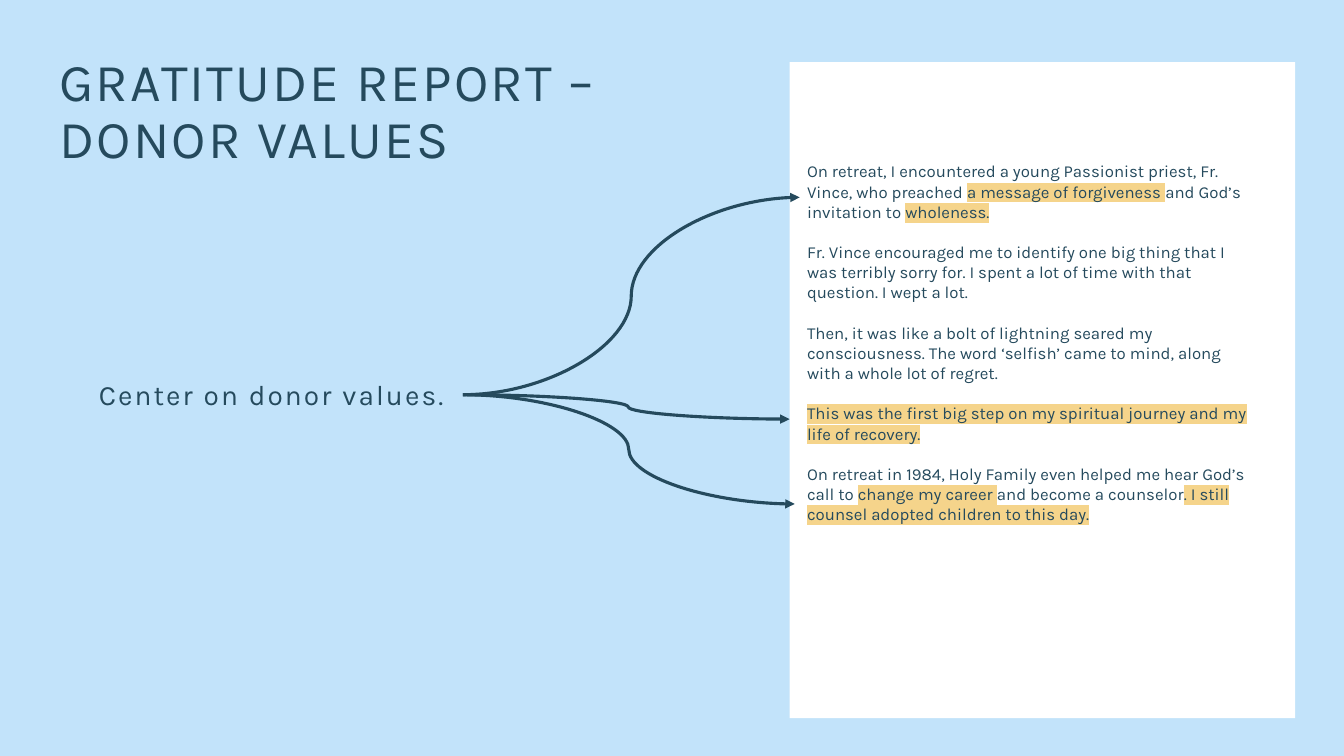
from typing import NamedTuple

from lxml.etree import SubElement
from pptx import Presentation
from pptx.dml.color import RGBColor
from pptx.enum.shapes import MSO_CONNECTOR as Connector, MSO_SHAPE as Preset
from pptx.enum.text import MSO_ANCHOR as Anchor, PP_ALIGN as Align
from pptx.oxml import parse_xml
from pptx.oxml.ns import nsdecls, qn
from pptx.util import Inches, Pt

# The page is a grid of 160 columns by 90 rows
COLUMNS, ROWS = 160, 90
WIDTH, HEIGHT = Inches(13.333), Inches(7.5)
SKY, WHITE, NAVY, GOLD = "C2E3FA", "FFFFFF", "254A5D", "F5D48B"
FONT = "Karla"


class Area(NamedTuple):
    column: float
    row: float
    columns: float
    rows: float


class Span(NamedTuple):
    text: str
    marked: bool = False


class Arrow(NamedTuple):
    start: tuple[float, float]
    end: tuple[float, float]


STORY = [
    [Span("On retreat, I encountered a young Passionist priest, Fr. Vince, who preached "),
     Span("a message of forgiveness ", True),
     Span("and God’s invitation to "),
     Span("wholeness.", True)],
    [Span("Fr. Vince encouraged me to identify one big thing that I was terribly sorry for. "
          "I spent a lot of time with that question. I wept a lot.")],
    [Span("Then, it was like a bolt of lightning seared my consciousness. "
          "The word ‘selfish’ came to mind, along with a whole lot of regret.")],
    [Span("This was the first big step on my spiritual journey and my life of recovery.", True)],
    [Span("On retreat in 1984, Holy Family even helped me hear God’s call to "),
     Span("change my career ", True),
     Span("and become a counselor"),
     Span(". I still counsel adopted children to this day.", True)],
]
ARROWS = [
    Arrow((55.1, 47), (95.2, 23.5)),
    Arrow((55.6, 47), (94, 49.9)),
    Arrow((55.1, 47), (94.6, 60)),
]


def color(value: str) -> RGBColor:
    return RGBColor.from_string(value)


def across(columns: float) -> int:
    return round(WIDTH * columns / COLUMNS)


def down(rows: float) -> int:
    return round(HEIGHT * rows / ROWS)


def frame(area: Area) -> tuple[int, int, int, int]:
    return across(area.column), down(area.row), across(area.columns), down(area.rows)


def add_panel(page, area: Area, fill: str) -> None:
    panel = page.shapes.add_shape(Preset.RECTANGLE, *frame(area))
    panel.shadow.inherit = False
    panel.fill.solid()
    panel.fill.fore_color.rgb = color(fill)
    panel.line.fill.background()


def format_span(run, size: float, tracking: float, marked: bool) -> None:
    run.font.size = Pt(size)
    run.font.name = FONT
    run.font.color.rgb = color(NAVY)
    properties = run._r.get_or_add_rPr()
    if tracking:
        properties.set("spc", str(round(tracking * 100)))
    if marked:
        highlight = parse_xml(f'<a:highlight {nsdecls("a")}><a:srgbClr val="{GOLD}"/></a:highlight>')
        properties.find(qn("a:solidFill")).addnext(highlight)


def add_text(page, area: Area, paragraphs: list[list[Span]], *, size: float,
             anchor=Anchor.TOP, align=Align.LEFT, tracking: float = 0,
             line_spacing: float = 1, gap: float = 0) -> None:
    box = page.shapes.add_textbox(*frame(area))
    text_frame = box.text_frame
    text_frame.word_wrap = True
    text_frame.vertical_anchor = anchor
    for index, spans in enumerate(paragraphs):
        para = text_frame.add_paragraph() if index else text_frame.paragraphs[0]
        para.alignment = align
        para.line_spacing = line_spacing
        if index:
            para.space_before = Pt(gap)
        for span in spans:
            for number, line in enumerate(span.text.split("\n")):
                if number:
                    para.add_line_break()
                run = para.add_run()
                run.text = line
                format_span(run, size, tracking, span.marked)


def add_arrow(page, arrow: Arrow) -> None:
    (left, top), (right, bottom) = arrow
    curve = page.shapes.add_connector(
        Connector.CURVE, across(left), down(top), across(right), down(bottom))
    curve.line.color.rgb = color(NAVY)
    curve.line.width = Pt(2.25)
    properties = curve._element.spPr
    SubElement(properties.find(qn("a:ln")), qn("a:tailEnd"), type="triangle")
    SubElement(properties, qn("a:effectLst"))


def main() -> None:
    deck = Presentation()
    deck.slide_width, deck.slide_height = WIDTH, HEIGHT
    page = deck.slides.add_slide(deck.slide_layouts[6])

    # Backdrop and title
    add_panel(page, Area(0, 0, COLUMNS, ROWS), SKY)
    add_text(page, Area(5.9, 6.2, 138, 14.5), [[Span("GRATITUDE REPORT –\nDONOR VALUES")]],
             size=38, anchor=Anchor.MIDDLE, tracking=1.5, line_spacing=0.9)

    # Donor story on its white sheet
    add_panel(page, Area(94, 7.4, 60.2, 78.1), WHITE)
    add_text(page, Area(94.9, 18.6, 55.6, 52.1), STORY, size=12, gap=14.4)

    # Advice and the arrows to the marked passages
    add_text(page, Area(9.5, 41.8, 45.6, 10.8), [[Span("Center on donor values.")]],
             size=20, anchor=Anchor.MIDDLE, align=Align.CENTER, tracking=1.5, line_spacing=0.9)
    for arrow in ARROWS:
        add_arrow(page, arrow)

    deck.save("out.pptx")


if __name__ == "__main__":
    main()
